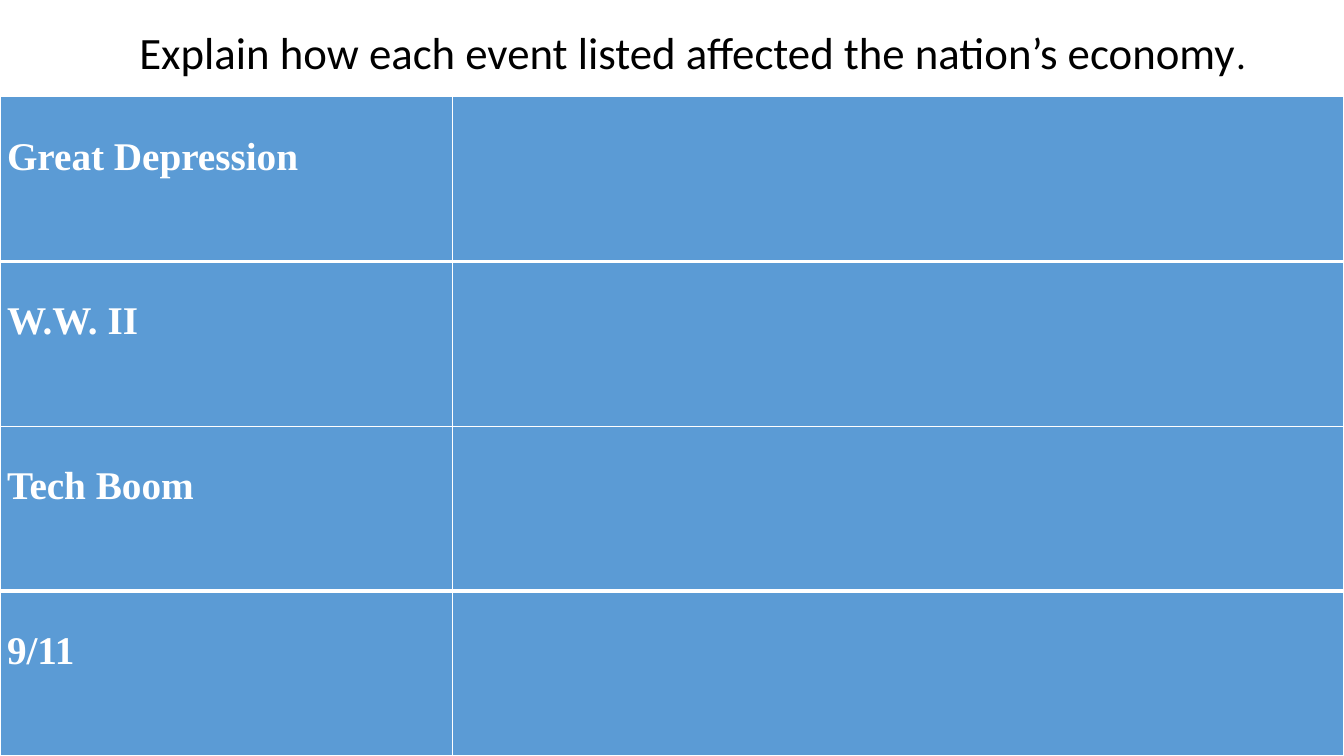
import pptx
import pptx.util
import pptx.dml.color
import pptx.enum.text
import pptx.oxml
import pptx.oxml.ns

Inches = pptx.util.Inches
Pt = pptx.util.Pt
RGB = pptx.dml.color.RGBColor

TITLE = [("Explain how each event listed affected the nation’s economy", 32), (".", 28)]
EVENTS = ["Great Depression", "W.W. II", "Tech Boom", "9/11"]
WHITE = RGB(0xFF, 0xFF, 0xFF)
BLACK = RGB(0, 0, 0)
BLUE = RGB(0x5B, 0x9B, 0xD5)
WIDE, HIGH = 13.33, 7.5
TOP = 0.96
COLS = [4.49, 8.84]
THIN, THICK = 1, 3


def add_run(para, text, size, font, color, bold=False):
    run = para.add_run()
    run.text = text
    run.font.size = Pt(size)
    run.font.name = font
    run.font.color.rgb = color
    run.font.bold = bold


def edge(cell, side, width):
    cell._tc.get_or_add_tcPr().append(pptx.oxml.parse_xml(
        f'<a:ln{side} {pptx.oxml.ns.nsdecls("a")} w="{Pt(width)}">'
        f'<a:solidFill><a:srgbClr val="{WHITE}"/></a:solidFill></a:ln{side}>'))


def add_grid(slide):
    count = len(EVENTS)
    tall = HIGH - TOP
    grid = slide.shapes.add_table(count, len(COLS), 0, Inches(TOP),
                                  Inches(WIDE), Inches(tall)).table
    for col, width in zip(grid.columns, COLS):
        col.width = Inches(width)
    for row, event in enumerate(EVENTS):
        grid.rows[row].height = Inches(tall / count)
        above = THICK if row == count - 1 else THIN
        below = THICK if row in (0, count - 2) else THIN
        if row == 1:
            above = THICK
        for cell in grid.rows[row].cells:
            for side, width in zip("LRTB", (THIN, THIN, above, below)):
                edge(cell, side, width)
            cell.fill.solid()
            cell.fill.fore_color.rgb = BLUE
            cell.margin_left = cell.margin_right = Inches(0.07)
            cell.margin_top = Inches(0.38)
            cell.margin_bottom = 0
        add_run(grid.cell(row, 0).text_frame.paragraphs[0], event, 28,
                "Times New Roman", WHITE, True)


def add_title(slide):
    box = slide.shapes.add_textbox(Inches(1.12), Inches(0.2), Inches(11.5), Inches(0.94))
    box.text_frame.word_wrap = False
    para = box.text_frame.paragraphs[0]
    para.alignment = pptx.enum.text.PP_ALIGN.CENTER
    for text, size in TITLE:
        add_run(para, text, size, "Calibri", BLACK)


def main():
    deck = pptx.Presentation()
    deck.slide_width, deck.slide_height = Inches(WIDE), Inches(HIGH)
    slide = deck.slides.add_slide(deck.slide_layouts[6])
    add_grid(slide)
    add_title(slide)
    deck.save("out.pptx")


if __name__ == "__main__":
    main()
